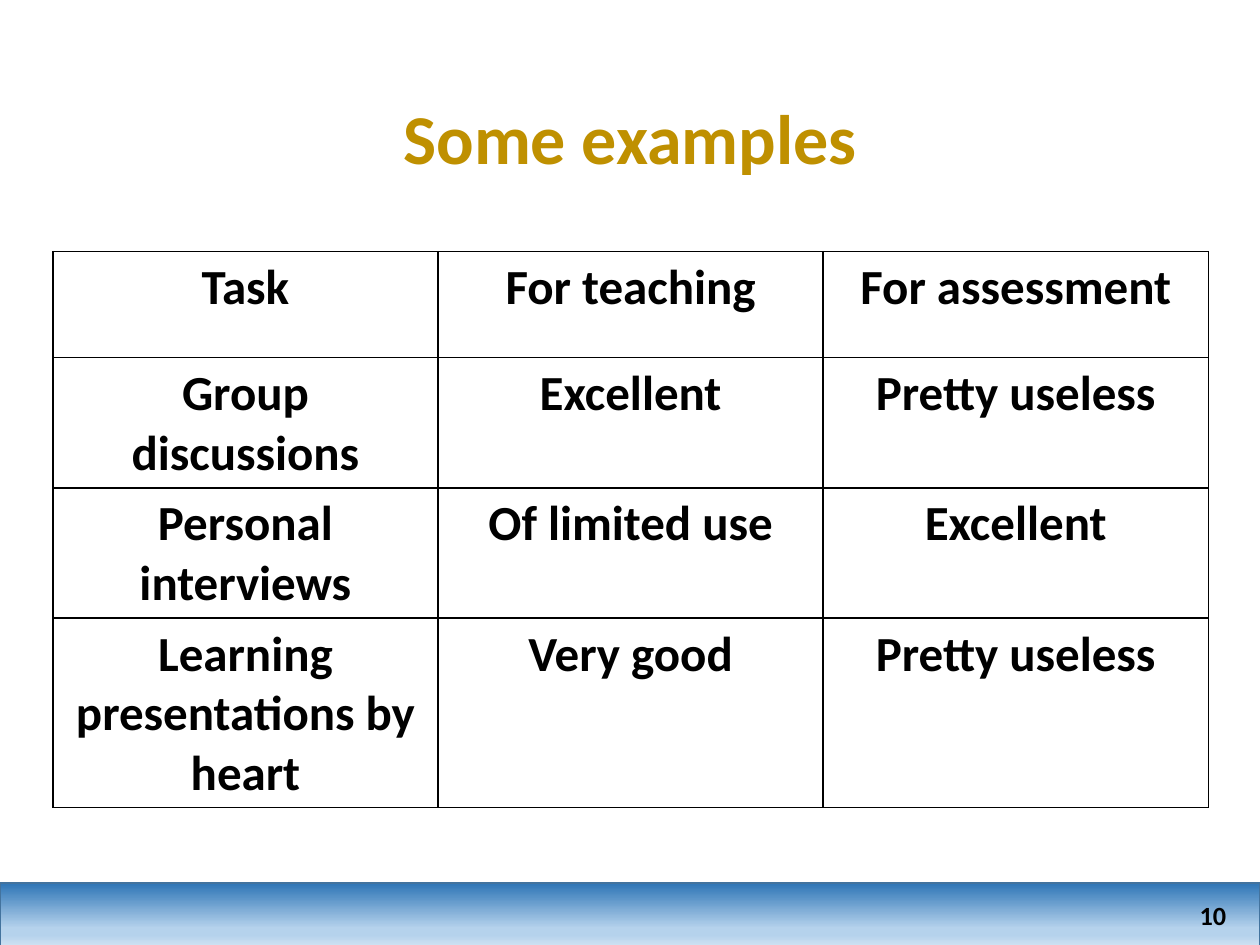
from dataclasses import dataclass

from lxml.etree import SubElement
from pptx import Presentation
from pptx.dml.color import RGBColor as Rgb
from pptx.enum.shapes import MSO_SHAPE as Shape
from pptx.enum.text import MSO_ANCHOR as Anchor, PP_ALIGN as Align
from pptx.oxml import parse_xml
from pptx.oxml.ns import nsdecls, qn
from pptx.util import Pt


@dataclass(frozen=True)
class Theme:
    font: str = "Calibri"
    ink: str = "000000"
    paper: str = "FFFFFF"
    title: str = "BF9000"
    title_edge: str = "806000"
    band_edge: str = "43739E"
    band_stops: tuple = ((0, "2E75B6"), (72, "B5D2EC"), (83, "B5D2EC"), (100, "CEE1F2"))
    title_size: float = 40
    cell_size: float = 28
    number_size: float = 15


@dataclass(frozen=True)
class Area:
    left: float
    top: float
    width: float
    height: float

    def lengths(self) -> tuple:
        return Pt(self.left), Pt(self.top), Pt(self.width), Pt(self.height)


THEME = Theme()
PAGE = Area(0, 0, 720, 540)
BAND = Area(0, 504.5, 720, 36)
TITLE = Area(49.5, 28.8, 621, 104.4)
GRID = Area(30.2, 143.8, 660.3, 242)
NUMBER = Area(670.3, 509.8, 37.4, 26)
ROWS = (
    ("Task", "For teaching", "For assessment"),
    ("Group discussions", "Excellent", "Pretty useless"),
    ("Personal interviews", "Of limited use", "Excellent"),
    ("Learning presentations by heart", "Very good", "Pretty useless"),
)


def line_xml(tag: str, color: str, width: float):
    return parse_xml(
        f'<a:{tag} {nsdecls("a")} w="{Pt(width)}"><a:solidFill>'
        f'<a:srgbClr val="{color}"/></a:solidFill></a:{tag}>'
    )


def write(frame, text: str, size: float, color: str, align: Align):
    para = frame.paragraphs[0]
    para.alignment = align
    span = para.add_run()
    span.text = text
    span.font.name = THEME.font
    span.font.size = Pt(size)
    span.font.bold = True
    span.font.color.rgb = Rgb.from_string(color)
    return para, span


def add_text(page, area: Area, text: str, size: float, color: str, align: Align):
    frame = page.shapes.add_textbox(*area.lengths()).text_frame
    frame.word_wrap = True
    frame.vertical_anchor = Anchor.MIDDLE
    return write(frame, text, size, color, align)


def add_band(page) -> None:
    band = page.shapes.add_shape(Shape.RECTANGLE, *BAND.lengths())
    band.shadow.inherit = False
    band.line.color.rgb = Rgb.from_string(THEME.band_edge)
    band.line.width = Pt(1)
    band.fill.gradient()
    band.fill.gradient_angle = 270
    stops = band.element.spPr.find(".//" + qn("a:gsLst"))
    for stop in list(stops):
        stops.remove(stop)
    for percent, color in THEME.band_stops:
        stop = SubElement(stops, qn("a:gs"), pos=str(percent * 1000))
        SubElement(stop, qn("a:srgbClr"), val=color)


def add_title(page) -> None:
    para, span = add_text(
        page, TITLE, "Some examples", THEME.title_size, THEME.title, Align.CENTER
    )
    para.line_spacing = 0.9
    span.font.element.insert(0, line_xml("ln", THEME.title_edge, 0.75)) if hasattr(
        span.font, "element"
    ) else span._r.get_or_add_rPr().insert(0, line_xml("ln", THEME.title_edge, 0.75))


def fill_cell(cell, text: str) -> None:
    write(cell.text_frame, text, THEME.cell_size, THEME.ink, Align.CENTER)
    cell.fill.solid()
    cell.fill.fore_color.rgb = Rgb.from_string(THEME.paper)
    properties = cell._tc.get_or_add_tcPr()
    for position, side in enumerate(("lnL", "lnR", "lnT", "lnB")):
        properties.insert(position, line_xml(side, THEME.ink, 1))


def add_grid(page) -> None:
    table = page.shapes.add_table(len(ROWS), len(ROWS[0]), *GRID.lengths()).table
    for row, texts in zip(table.rows, ROWS):
        for cell, text in zip(row.cells, texts):
            fill_cell(cell, text)


def main() -> None:
    deck = Presentation()
    deck.slide_width, deck.slide_height = Pt(PAGE.width), Pt(PAGE.height)
    page = deck.slides.add_slide(deck.slide_layouts[6])
    add_band(page)
    add_title(page)
    add_grid(page)
    add_text(page, NUMBER, "10", THEME.number_size, THEME.ink, Align.RIGHT)
    deck.save("out.pptx")


if __name__ == "__main__":
    main()
